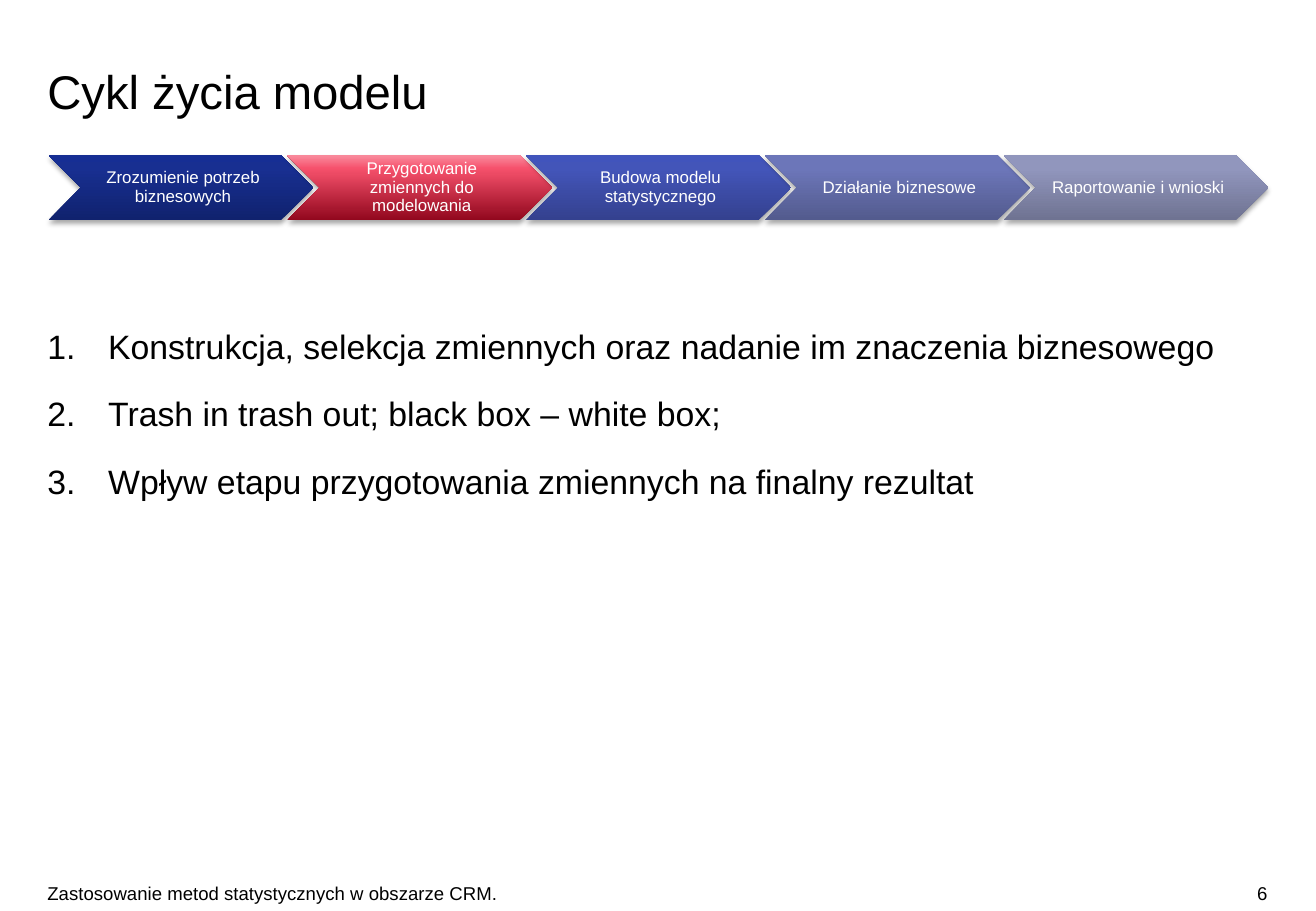
from dataclasses import dataclass

from pptx import Presentation
from pptx.dml.color import RGBColor
from pptx.enum import shapes, text
from pptx.oxml import parse_xml
from pptx.oxml.ns import nsdecls
from pptx.util import Inches, Pt


@dataclass(frozen=True)
class Theme:
    face: str = "Arial"
    ink: str = "000000"
    light: str = "FFFFFF"
    title: int = 28
    body: int = 20
    foot: int = 11
    step: int = 10


THEME = Theme()
LEFT, WIDE = 0.39, 10.04

# Each step: label, then gradient colours from bottom to top
STEPS = [
    ("Zrozumienie potrzeb biznesowych", ("10226E", "182F91", "162E94")),
    ("Przygotowanie zmiennych do modelowania", ("92081E", "F6516C", "F98B9D")),
    ("Budowa modelu statystycznego", ("34418F", "4355B9", "4154BC")),
    ("Działanie biznesowe", ("535B8E", "6C76B9", "6B76BB")),
    ("Raportowanie i wnioski", ("6F7392", "9196BD", "9196BF")),
]
POINTS = [
    "Konstrukcja, selekcja zmiennych oraz nadanie im znaczenia biznesowego",
    "Trash in trash out; black box – white box;",
    "Wpływ etapu przygotowania zmiennych na finalny rezultat",
]


def apply(item, form):
    for key, value in form.items():
        setattr(item, key, value)


def set_font(para, size, color):
    apply(para.font, {"name": THEME.face, "size": Pt(size), "bold": False})
    para.font.color.rgb = RGBColor.from_string(color)


def set_frame(frame, pads, anchor):
    """Set wrapping, anchor and left, top, right, bottom margins in inches."""
    sides = ("margin_left", "margin_top", "margin_right", "margin_bottom")
    apply(frame, dict(zip(sides, map(Inches, pads))))
    apply(frame, {"word_wrap": True, "vertical_anchor": anchor,
                  "auto_size": text.MSO_AUTO_SIZE.NONE})


def add_title(slide, box, label):
    title = slide.shapes.title
    apply(title, dict(zip(("left", "top", "width", "height"), map(Inches, box))))
    set_frame(title.text_frame, (0, 0, 0, 0), text.MSO_ANCHOR.BOTTOM)
    para = title.text_frame.paragraphs[0]
    para.text = label
    para.alignment = text.PP_ALIGN.LEFT
    set_font(para, THEME.title, THEME.ink)


def paint(shape, colors):
    """Give the shape a three-stop vertical gradient and a soft shadow."""
    stops = "".join(
        f'<a:gs pos="{pos}"><a:srgbClr val="{color}"/></a:gs>'
        for pos, color in zip((0, 80000, 100000), colors))
    shape.line.fill.background()
    shape.shadow.inherit = False
    props = shape._element.spPr
    props.insert(2, parse_xml(
        f'<a:gradFill {nsdecls("a")} rotWithShape="1"><a:gsLst>{stops}</a:gsLst>'
        '<a:lin ang="16200000" scaled="0"/></a:gradFill>'))
    props[-1].append(parse_xml(
        f'<a:outerShdw {nsdecls("a")} blurRad="{Pt(3.1)}" dist="{Pt(1.8)}" '
        'dir="5400000" rotWithShape="0"><a:srgbClr val="000000">'
        '<a:alpha val="35000"/></a:srgbClr></a:outerShdw>'))


def add_steps(slide, box, steps):
    left, top, width, height = box
    size = 2.18
    pitch = (width - size) / (len(steps) - 1)
    for i, (label, colors) in enumerate(steps):
        shape = slide.shapes.add_shape(
            shapes.MSO_SHAPE.CHEVRON, Inches(left + i * pitch), Inches(top),
            Inches(size), Inches(height))
        paint(shape, colors)
        set_frame(shape.text_frame, (0.04, 0.01, 0.01, 0.01),
                  text.MSO_ANCHOR.MIDDLE)
        para = shape.text_frame.paragraphs[0]
        para.text = label
        apply(para, {"alignment": text.PP_ALIGN.CENTER, "line_spacing": 0.9})
        set_font(para, THEME.step, THEME.light)


def add_points(slide, box, points):
    frame = slide.shapes.add_textbox(*map(Inches, box)).text_frame
    set_frame(frame, (0, 0, 0, 0), text.MSO_ANCHOR.TOP)
    for i, point in enumerate(points):
        para = frame.add_paragraph() if i else frame.paragraphs[0]
        para.text = point
        apply(para, {"space_before": Pt(12 if i else 0), "space_after": Pt(4)})
        props = para._p.get_or_add_pPr()
        props.set("marL", str(Inches(0.5)))
        props.set("indent", str(-Inches(0.5)))
        props.append(parse_xml(
            f'<a:buAutoNum {nsdecls("a")} type="arabicPeriod"/>'))
        set_font(para, THEME.body, THEME.ink)


def add_footer(slide, box, label, number):
    left, top, width, height = box
    page = 0.89
    parts = [
        (label, left, 7.99, (0, 0.05, 0.1, 0.05), text.PP_ALIGN.LEFT),
        (number, left + width - page, page, (0.1, 0.05, 0, 0.05),
         text.PP_ALIGN.RIGHT),
    ]
    for words, x, size, pads, align in parts:
        frame = slide.shapes.add_textbox(
            Inches(x), Inches(top), Inches(size), Inches(height)).text_frame
        set_frame(frame, pads, text.MSO_ANCHOR.MIDDLE)
        para = frame.paragraphs[0]
        para.text = words
        para.alignment = align
        set_font(para, THEME.foot, THEME.ink)


def main():
    deck = Presentation()
    apply(deck, {"slide_width": Inches(10.83), "slide_height": Inches(7.5)})
    slide = deck.slides.add_slide(deck.slide_layouts[5])
    add_title(slide, (LEFT, 0.5, 8.53, 0.48), "Cykl życia modelu")
    add_steps(slide, (LEFT + 0.01, 1.28, WIDE, 0.53), STEPS)
    add_points(slide, (LEFT, 2.68, WIDE, 4.4), POINTS)
    add_footer(slide, (LEFT, 7.21, WIDE, 0.29),
               "Zastosowanie metod statystycznych w obszarze CRM.", "6")
    deck.save("out.pptx")


if __name__ == "__main__":
    main()
